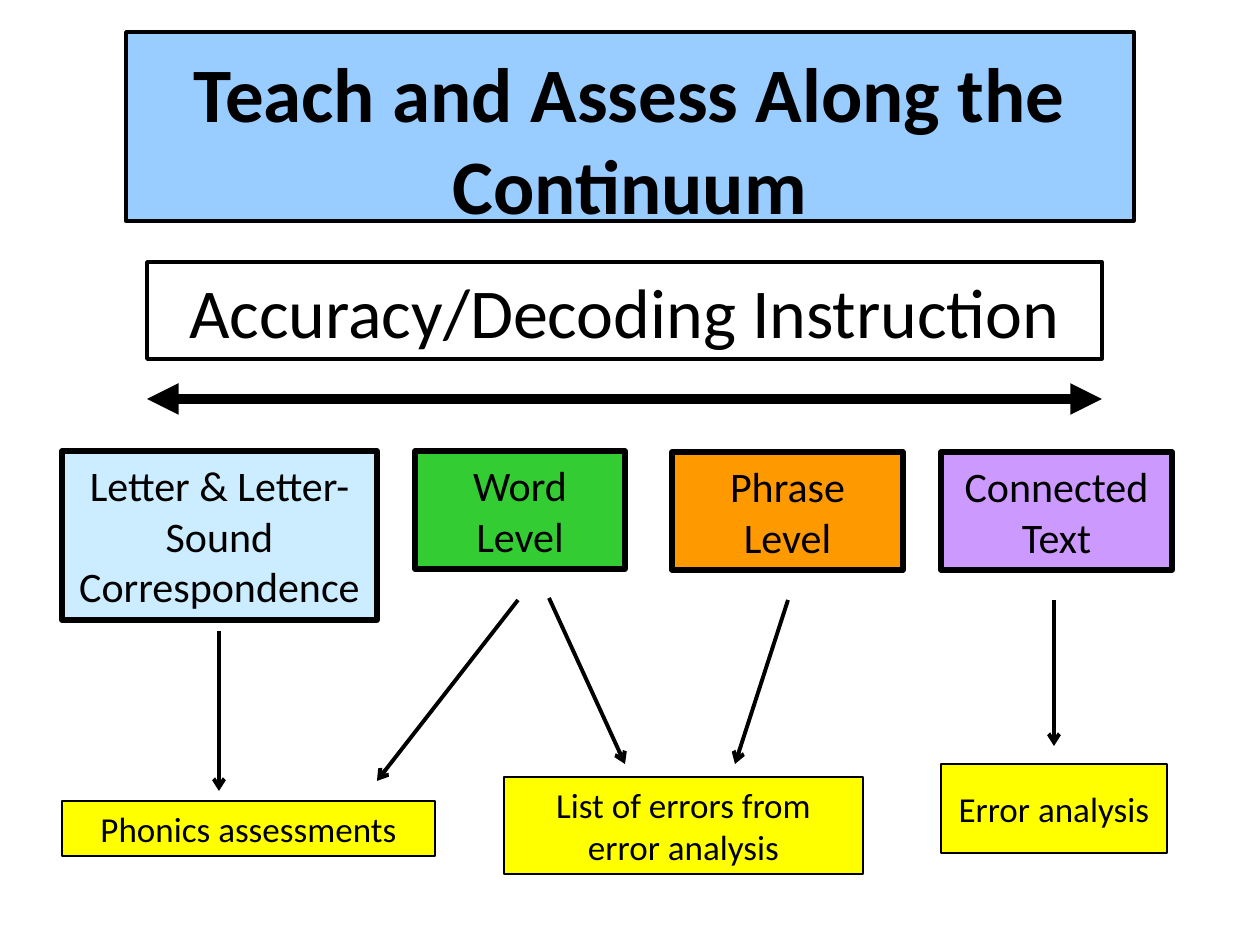
import pptx
import pptx.util
import pptx.dml.color
import pptx.enum.shapes
import pptx.enum.text
import pptx.oxml.ns
from lxml import etree

THEME = {
    "font": "Calibri", "ink": "000000",
    "title": "99CCFF", "letter": "CCECFF", "word": "33CC33",
    "phrase": "FF9900", "text": "CC99FF", "assess": "FFFF00",
    "title_pt": 44, "heading_pt": 40, "level_pt": 24, "assess_pt": 20,
}

# Content: text, (left, top, width, height) in px, fill
TITLE = ("Teach and Assess Along the Continuum", (126, 32, 1008, 189), "title")
HEADING = ("Accuracy/Decoding Instruction", (147, 262, 955, 97), None)
LEVELS = [
    ("Letter & Letter-Sound Correspondence", (62, 451, 315, 169), "letter"),
    ("Word Level", (415, 451, 210, 118), "word"),
    ("Phrase Level", (672, 452, 231, 118), "phrase"),
    ("Connected Text", (941, 452, 231, 118), "text"),
]
ASSESSMENTS = [
    ("Phonics assessments", (62, 801, 373, 55), "assess"),
    ("List of errors from error analysis", (504, 777, 359, 97), "assess"),
    ("Error analysis", (941, 764, 226, 89), "assess"),
]
# Arrows from level to assessment: x1, y1, x2, y2
ARROWS = [
    (219, 631, 219, 791),
    (518, 600, 377, 781),
    (549, 598, 625, 764),
    (788, 600, 735, 764),
    (1054, 600, 1054, 746),
]
CONTINUUM = (147, 399, 1102, 399)


def px(n):
    return round(n * 914400 / 126)


def color(name):
    return pptx.dml.color.RGBColor.from_string(THEME[name])


def add_box(s, content, size, border, bold=False, insets=(6, 6)):
    text, place, fill = content
    sp = s.shapes.add_shape(pptx.enum.shapes.MSO_SHAPE.RECTANGLE, *map(px, place))
    sp.shadow.inherit = False
    if fill:
        sp.fill.solid()
        sp.fill.fore_color.rgb = color(fill)
    else:
        sp.fill.background()
    sp.line.color.rgb = color("ink")
    sp.line.width = pptx.util.Pt(border)
    tf = sp.text_frame
    tf.word_wrap = True
    tf.vertical_anchor = pptx.enum.text.MSO_ANCHOR.MIDDLE
    tf.margin_top, tf.margin_bottom = map(px, insets)
    p = tf.paragraphs[0]
    p.text = text
    p.alignment = pptx.enum.text.PP_ALIGN.CENTER
    p.font.name = THEME["font"]
    p.font.size = pptx.util.Pt(THEME[size])
    p.font.bold = bold
    p.font.color.rgb = color("ink")


def add_arrow(s, ends, width, **heads):
    line = s.shapes.add_connector(pptx.enum.shapes.MSO_CONNECTOR.STRAIGHT, *map(px, ends))
    line.line.color.rgb = color("ink")
    line.line.width = pptx.util.Pt(width)
    ln = line.line._get_or_add_ln()
    for tag, kind in heads.items():
        etree.SubElement(ln, pptx.oxml.ns.qn("a:" + tag), type=kind)
    etree.SubElement(line._element.spPr, pptx.oxml.ns.qn("a:effectLst"))


prs = pptx.Presentation()
prs.slide_width, prs.slide_height = px(1260), px(945)
s = prs.slides.add_slide(prs.slide_layouts[6])

# Title, heading and continuum
add_box(s, TITLE, "title_pt", 2, bold=True, insets=(23, 0))
add_box(s, HEADING, "heading_pt", 2)
add_arrow(s, CONTINUUM, 6, headEnd="triangle", tailEnd="triangle")

# Levels, assessments and the arrows between them
for level in LEVELS:
    add_box(s, level, "level_pt", 3)
for assessment in ASSESSMENTS:
    add_box(s, assessment, "assess_pt", 0.75)
for ends in ARROWS:
    add_arrow(s, ends, 2.25, tailEnd="arrow")

prs.save("out.pptx")
